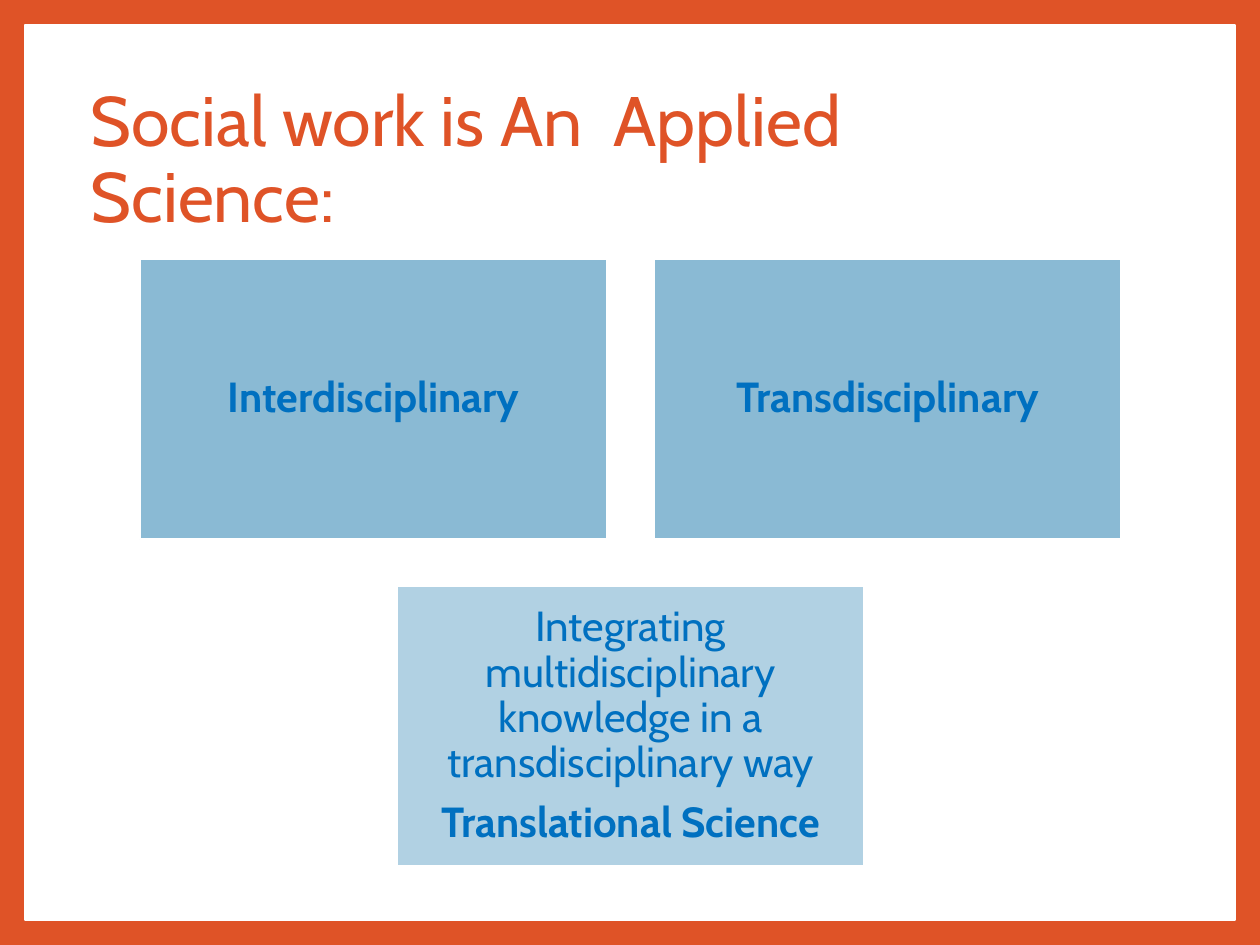
from dataclasses import dataclass

from pptx import Presentation
from pptx import util as u
from pptx.dml.color import RGBColor
from pptx.enum import shapes, text


@dataclass(frozen=True)
class Theme:
    font: str = "Cabin"
    accent: str = "DF5327"
    paper: str = "FFFFFF"
    box: str = "8ABAD4"
    result_box: str = "B1D1E3"
    box_text: str = "0070C0"
    title_size: int = 40
    box_size: int = 24


@dataclass(frozen=True)
class Line:
    words: str
    bold: bool = False


@dataclass(frozen=True)
class Box:
    column: float
    row: int
    fill: str
    lines: tuple[Line, ...]


THEME = Theme()
SLIDE_WIDTH, SLIDE_HEIGHT = 10, 7.5
BORDER = 0.2

# Grid of boxes: a gap of 0.37 separates columns and rows
GRID_LEFT, GRID_TOP = 1.11, 2.05
BOX_WIDTH, BOX_HEIGHT, GAP = 3.71, 2.23, 0.37

BOXES = (
    Box(0, 0, THEME.box, (Line("Interdisciplinary", bold=True),)),
    Box(1, 0, THEME.box, (Line("Transdisciplinary", bold=True),)),
    Box(0.5, 1, THEME.result_box, (
        Line("Integrating multidisciplinary knowledge in a transdisciplinary way"),
        Line("Translational Science", bold=True),
    )),
)


def write(paragraph, words: str, *, size: float, color: str, bold: bool = False,
          align=text.PP_ALIGN.LEFT, space_after: float = 0) -> None:
    paragraph.alignment = align
    paragraph.line_spacing = 0.9
    paragraph.space_before = u.Pt(0)
    paragraph.space_after = u.Pt(space_after)
    run = paragraph.add_run()
    run.text = words
    run.font.name = THEME.font
    run.font.size = u.Pt(size)
    run.font.bold = bold
    run.font.color.rgb = RGBColor.from_string(color)


def set_frame(frame, inset: tuple[float, float]) -> None:
    frame.word_wrap = True
    frame.auto_size = text.MSO_AUTO_SIZE.NONE
    frame.vertical_anchor = text.MSO_ANCHOR.MIDDLE
    frame.margin_left = frame.margin_right = u.Inches(inset[0])
    frame.margin_top = frame.margin_bottom = u.Inches(inset[1])


def add_rectangle(slide, left: float, top: float, width: float, height: float,
                  *, fill: str, line_width: float):
    shape = slide.shapes.add_shape(
        shapes.MSO_SHAPE.RECTANGLE,
        u.Inches(left), u.Inches(top), u.Inches(width), u.Inches(height))
    shape.shadow.inherit = False
    shape.fill.solid()
    shape.fill.fore_color.rgb = RGBColor.from_string(fill)
    shape.line.color.rgb = RGBColor.from_string(THEME.paper)
    shape.line.width = u.Pt(line_width)
    return shape


def add_box(slide, box: Box) -> None:
    shape = add_rectangle(
        slide,
        GRID_LEFT + box.column * (BOX_WIDTH + GAP),
        GRID_TOP + box.row * (BOX_HEIGHT + GAP),
        BOX_WIDTH, BOX_HEIGHT, fill=box.fill, line_width=1.5)
    frame = shape.text_frame
    set_frame(frame, (0.1, 0.1))
    for index, line in enumerate(box.lines):
        paragraph = frame.add_paragraph() if index else frame.paragraphs[0]
        write(paragraph, line.words, size=THEME.box_size, color=THEME.box_text,
              bold=line.bold, align=text.PP_ALIGN.CENTER,
              space_after=0.35 * THEME.box_size)


def set_title(slide, words: str) -> None:
    title = slide.shapes.title
    title.left, title.top = u.Inches(0.62), u.Inches(0.32)
    title.width, title.height = u.Inches(8.03), u.Inches(1.93)
    set_frame(title.text_frame, (0.1, 0.05))
    write(title.text_frame.paragraphs[0], words,
          size=THEME.title_size, color=THEME.accent)


def main() -> None:
    presentation = Presentation()
    presentation.slide_width = u.Inches(SLIDE_WIDTH)
    presentation.slide_height = u.Inches(SLIDE_HEIGHT)
    slide = presentation.slides.add_slide(presentation.slide_layouts[5])

    # Coloured border around a white panel, which goes behind the title
    slide.background.fill.solid()
    slide.background.fill.fore_color.rgb = RGBColor.from_string(THEME.accent)
    panel = add_rectangle(
        slide, BORDER, BORDER, SLIDE_WIDTH - 2 * BORDER,
        SLIDE_HEIGHT - 2 * BORDER, fill=THEME.paper, line_width=1)
    slide.shapes.title.element.addprevious(panel.element)

    # Title
    set_title(slide, "Social work is An  Applied Science:")

    # Two disciplines above, their result centred below
    for box in BOXES:
        add_box(slide, box)

    presentation.save("out.pptx")


if __name__ == "__main__":
    main()
